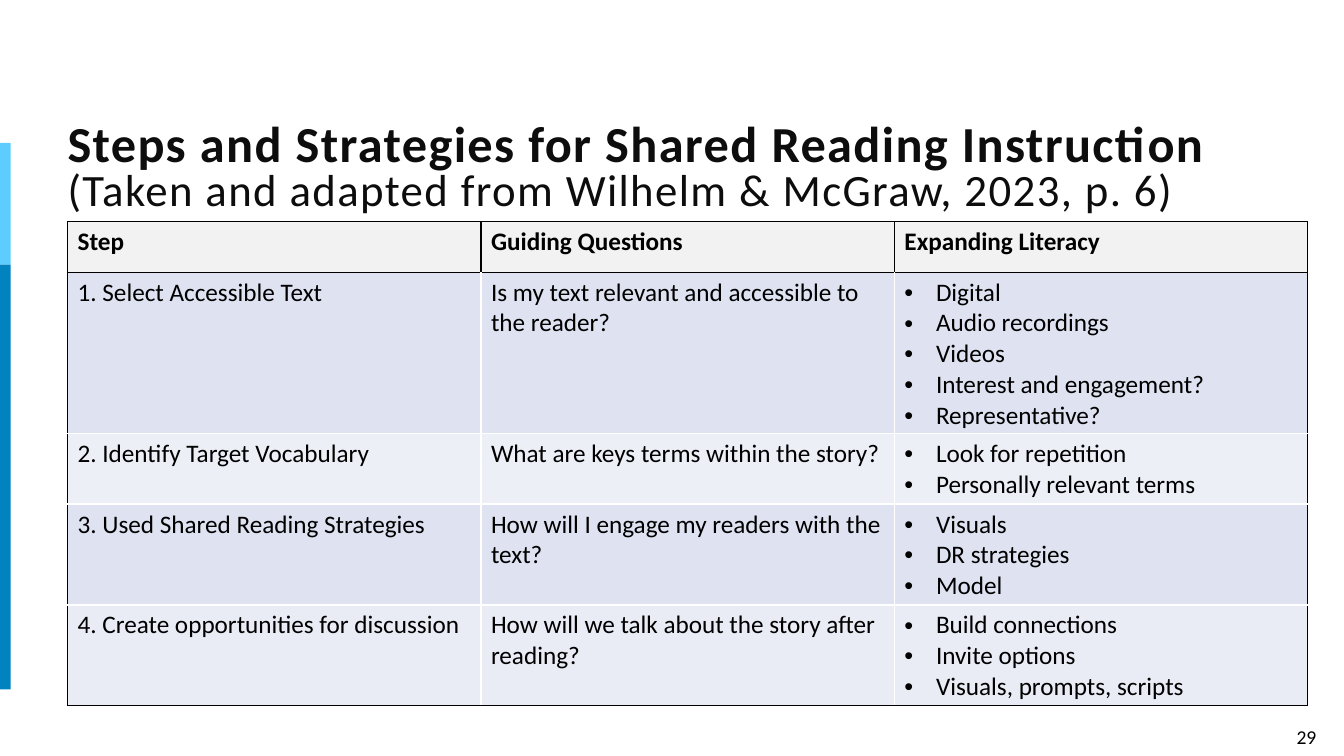
from lxml.etree import SubElement
from pptx import Presentation
from pptx.dml.color import RGBColor
from pptx.enum.shapes import MSO_SHAPE
from pptx.enum.text import MSO_ANCHOR, MSO_AUTO_SIZE, PP_ALIGN
from pptx.oxml.ns import qn
from pptx.util import Pt

BLACK = RGBColor(0x00, 0x00, 0x00)
WHITE = RGBColor(0xFF, 0xFF, 0xFF)
INK = RGBColor(0x0D, 0x0D, 0x0D)
SKY = RGBColor(0x5D, 0xCD, 0xFF)
BLUE = RGBColor(0x00, 0x83, 0xBF)
HEADER_GREY = RGBColor(0xF2, 0xF2, 0xF2)
LAVENDER = RGBColor(0xDF, 0xE3, 0xF1)
PALE = RGBColor(0xED, 0xEF, 0xF7)
PALE_LAST = RGBColor(0xE9, 0xEB, 0xF5)

FONT = "Calibri"
BULLET_INDENT = 22.5
ROW_HEIGHTS = [36, 113, 49, 70.5, 70.5]
ROW_FILLS = [HEADER_GREY, LAVENDER, PALE, LAVENDER, PALE_LAST]
ROWS = [
    ("Step", "Guiding Questions", ["Expanding Literacy"]),
    ("1. Select Accessible Text",
     "Is my text relevant and accessible to the reader?",
     ["Digital", "Audio recordings", "Videos", "Interest and engagement?", "Representative?"]),
    ("2. Identify Target Vocabulary",
     "What are keys terms within the story?",
     ["Look for repetition", "Personally relevant terms"]),
    ("3. Used Shared Reading Strategies",
     "How will I engage my readers with the text?",
     ["Visuals", "DR strategies", "Model"]),
    ("4. Create opportunities for discussion",
     "How will we talk about the story after reading?",
     ["Build connections", "Invite options", "Visuals, prompts, scripts"]),
]


def add_span(para, text, size=18, color=BLACK, bold=False, spacing=None):
    span = para.add_run()
    span.text = text
    span.font.name = FONT
    span.font.size = Pt(size)
    span.font.bold = bold
    span.font.color.rgb = color
    if spacing is not None:
        span.font._element.set("spc", str(int(spacing * 100)))


def add_bullet(para):
    properties = para._p.get_or_add_pPr()
    properties.set("marL", str(Pt(BULLET_INDENT)))
    properties.set("indent", str(-Pt(BULLET_INDENT)))
    SubElement(properties, qn("a:buFont"), typeface="Arial")
    SubElement(properties, qn("a:buChar"), char="•")


def add_border(cell, side, color):
    line = SubElement(cell._tc.get_or_add_tcPr(), qn(f"a:ln{side}"), w=str(Pt(1)))
    fill = SubElement(line, qn("a:solidFill"))
    SubElement(fill, qn("a:srgbClr"), val=str(color))


def add_side_band(page, left, top, width, height):
    upper = 87
    for color, y, tall in [(SKY, top, upper), (BLUE, top + upper, height - upper)]:
        band = page.shapes.add_shape(MSO_SHAPE.RECTANGLE, Pt(left), Pt(y), Pt(width), Pt(tall))
        band.shadow.inherit = False
        band.fill.solid()
        band.fill.fore_color.rgb = color
        band.line.fill.background()


def add_page_number(page, left, top, width, height):
    box = page.shapes.add_textbox(Pt(left), Pt(top), Pt(width), Pt(height))
    box.text_frame.word_wrap = True
    para = box.text_frame.paragraphs[0]
    para.alignment = PP_ALIGN.CENTER
    add_span(para, "29", size=14)


def place_title(page, left, top, width, height):
    title = page.shapes.title
    title.left, title.top, title.width, title.height = Pt(left), Pt(top), Pt(width), Pt(height)
    frame = title.text_frame
    frame.auto_size = MSO_AUTO_SIZE.NONE
    frame.word_wrap = True
    frame.vertical_anchor = MSO_ANCHOR.MIDDLE
    frame.margin_left, frame.margin_top = Pt(0), Pt(14.4)
    frame.margin_right, frame.margin_bottom = Pt(7.2), Pt(3.6)
    para = frame.paragraphs[0]
    para.alignment = PP_ALIGN.LEFT
    para.line_spacing = 0.8
    add_span(para, "Steps and Strategies for Shared Reading Instruction ",
             size=36, color=INK, bold=True, spacing=1)
    add_span(para, "(Taken and adapted from Wilhelm & McGraw, 2023, p. 6)",
             size=32, color=INK, spacing=1)


def fill_cell(cell, content, header, bulleted):
    lines = content if isinstance(content, list) else [content]
    frame = cell.text_frame
    for number, text in enumerate(lines):
        para = frame.paragraphs[0] if number == 0 else frame.add_paragraph()
        if bulleted:
            add_bullet(para)
        add_span(para, text, bold=header)


def add_steps_table(page, left, top, width):
    """Black lines frame the table and its header; inner lines are white."""
    last_row, last_column = len(ROWS) - 1, len(ROWS[0]) - 1
    table = page.shapes.add_table(len(ROWS), len(ROWS[0]), Pt(left), Pt(top),
                                  Pt(width), Pt(sum(ROW_HEIGHTS))).table
    table.first_row = table.horz_banding = False
    for row, contents in enumerate(ROWS):
        table.rows[row].height = Pt(ROW_HEIGHTS[row])
        header = row == 0
        for column, content in enumerate(contents):
            cell = table.cell(row, column)
            fill_cell(cell, content, header, bulleted=column == last_column and not header)
            black_sides = {
                "L": header or column == 0,
                "R": header or column == last_column,
                "T": row <= 1,
                "B": header or row == last_row,
            }
            for side, is_black in black_sides.items():
                add_border(cell, side, BLACK if is_black else WHITE)
            cell.fill.solid()
            cell.fill.fore_color.rgb = ROW_FILLS[row]


def main():
    deck = Presentation()
    deck.slide_width, deck.slide_height = Pt(960), Pt(540)
    page = deck.slides.add_slide(deck.slide_layouts[5])
    add_page_number(page, 909.5, 514, 47.5, 24.5)
    add_side_band(page, -2.4, 102, 10, 390.5)
    place_title(page, 48.25, 87, 864.75, 57.6)
    add_steps_table(page, 48.25, 158.4, 886)
    deck.save("out.pptx")


if __name__ == "__main__":
    main()
